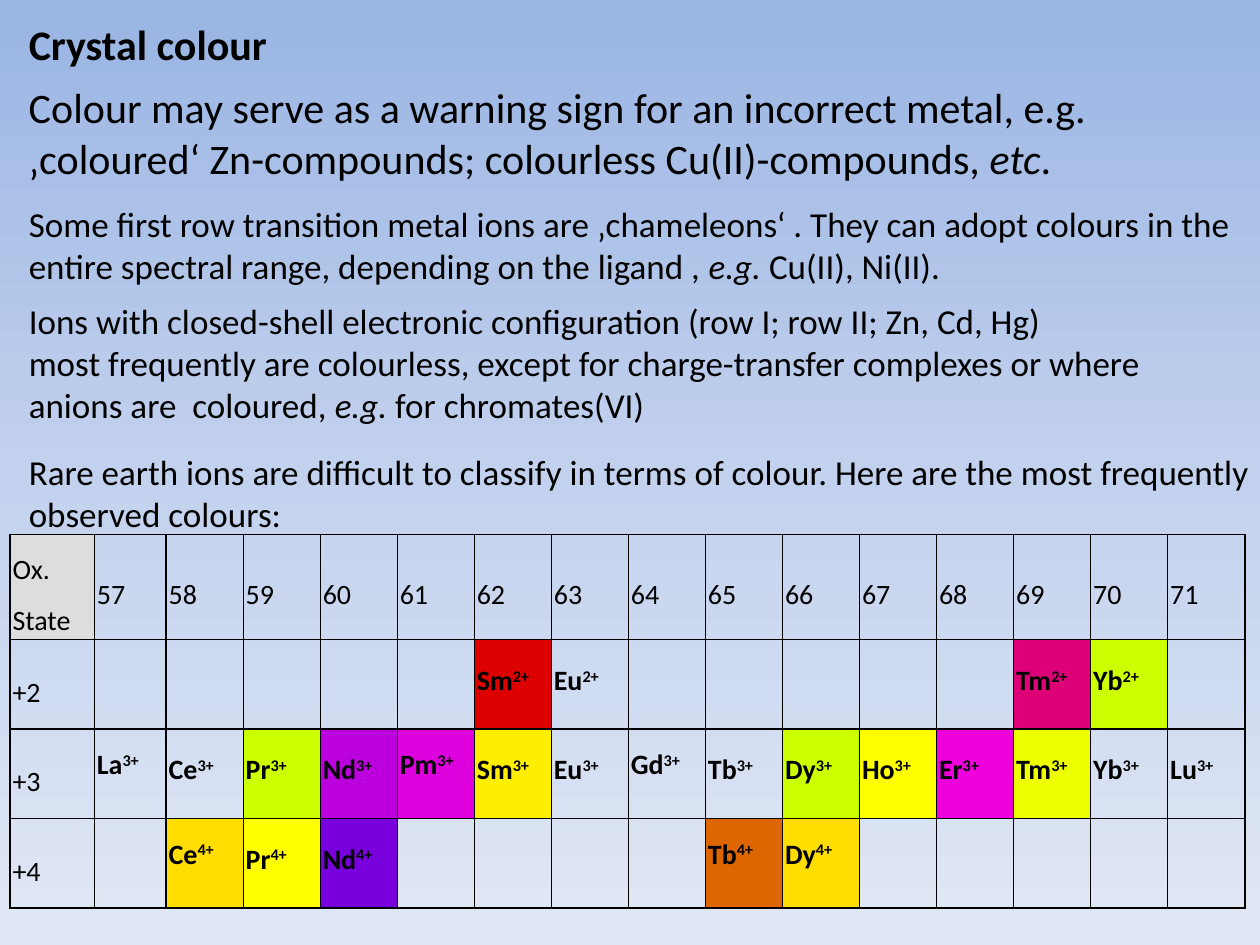
from copy import deepcopy
from dataclasses import dataclass

from lxml.etree import SubElement
from pptx import Presentation
from pptx.dml.color import RGBColor
from pptx.enum.text import MSO_ANCHOR, MSO_AUTO_SIZE
from pptx.oxml.ns import qn
from pptx.util import Inches, Pt


@dataclass(frozen=True)
class Theme:
    font: str = "Calibri"
    ink: str = "000000"
    corner: str = "DDDDDD"
    backdrop: tuple = ((0, "9AB5E4"), (0.5, "C2D1ED"), (1, "E1E8F5"))
    large: int = 24
    body: int = 20
    cell: int = 16
    small: int = 11
    superscript: int = 30000
    border: int = 1


THEME = Theme()

# Box (left, top, width, height), size, bold, lines; a line alternates upright and italic.
PARAGRAPHS = [
    ((0.13, 2.33, 9.11, 1.11), THEME.body, False, [
        ["Ions with closed-shell electronic configuration (row I; row II; Zn, Cd, Hg)"],
        ["most frequently are colourless, except for charge-transfer complexes or where"],
        ["anions are  coloured, ", "e.g. ", "for chromates(VI)"]]),
    ((0.13, 1.56, 9.89, 0.77), THEME.body, False, [
        ["Some first row transition metal ions are ‚chameleons‘ . They can adopt colours in the"],
        ["entire spectral range, depending on the ligand , ", "e.g. ", "Cu(II), Ni(II)."]]),
    ((0.13, 0.1, 2.19, 0.5), THEME.large, True, [["Crystal colour"]]),
    ((0.13, 3.53, 9.99, 0.77), THEME.body, False, [
        ["Rare earth ions are difficult to classify in terms of colour. "
         "Here are the most frequently"],
        ["observed colours:"]]),
    ((0.13, 0.6, 8.74, 0.91), THEME.large, False, [
        ["Colour may serve as a warning sign for an incorrect metal, e.g."],
        ["‚coloured‘ Zn-compounds; colourless Cu(II)-compounds, ", "etc", "."]]),
]

FIRST_NUMBER, LAST_NUMBER = 57, 71
ELEMENTS = "La Ce Pr Nd Pm Sm Eu Gd Tb Dy Ho Er Tm Yb Lu".split()
ION_COLOURS = {
    2: {"Sm": "DD0000", "Eu": None, "Tm": "DD0077", "Yb": "CCFF00"},
    3: dict.fromkeys(ELEMENTS) | {
        "Pr": "CCFF00", "Nd": "BB00DD", "Pm": "DD00DD", "Sm": "FFEE00", "Dy": "CCFF00",
        "Ho": "FFFF00", "Er": "EE00DD", "Tm": "EEFF00"},
    4: {"Ce": "FFDD00", "Pr": "FFFF00", "Nd": "7700DD", "Tb": "DD6600", "Dy": "FFDD00"},
}
RAISED_IONS = {(3, "La"), (3, "Pm"), (3, "Gd"), (4, "Ce"), (4, "Tb"), (4, "Dy")}


def set_all(target, values):
    for name, value in values.items():
        setattr(target, name, value)


def add_span(para, text, size, **styles):
    span = para.add_run()
    span.text = text
    set_all(span.font, {"name": THEME.font, "size": Pt(size), **styles})
    span.font.color.rgb = RGBColor.from_string(THEME.ink)
    return span


def paint_backdrop(page):
    fill = page.background.fill
    fill.gradient()
    fill.gradient_angle = 270
    stop_list = next(page.background._cSld.iter(qn("a:gsLst")))
    stop_list.append(deepcopy(stop_list[-1]))
    for stop, (position, colour) in zip(fill.gradient_stops, THEME.backdrop):
        stop.position = position
        stop.color.rgb = RGBColor.from_string(colour)


def add_paragraph_box(page, box, size, bold, lines):
    frame = page.shapes.add_textbox(*map(Inches, box)).text_frame
    set_all(frame, {"word_wrap": False, "auto_size": MSO_AUTO_SIZE.SHAPE_TO_FIT_TEXT})
    for index, line in enumerate(lines):
        para = frame.add_paragraph() if index else frame.paragraphs[0]
        for part, text in enumerate(line):
            add_span(para, text, size, bold=bold, italic=part % 2 == 1)


def style_cell(cell, colour=None):
    """Set margins, black borders and the fill; without a colour the cell is clear."""
    set_all(cell, {"vertical_anchor": MSO_ANCHOR.MIDDLE,
                   "margin_left": Inches(0.02), "margin_right": Inches(0.02),
                   "margin_top": Inches(0.01), "margin_bottom": Inches(0.01)})
    properties = cell._tc.get_or_add_tcPr()
    for side in ("a:lnL", "a:lnR", "a:lnT", "a:lnB"):
        line = SubElement(properties, qn(side), w=str(Pt(THEME.border)))
        SubElement(SubElement(line, qn("a:solidFill")), qn("a:srgbClr"), val=THEME.ink)
    if colour:
        cell.fill.solid()
        cell.fill.fore_color.rgb = RGBColor.from_string(colour)
    else:
        cell.fill.background()


def write_cell(cell, text, bold=False):
    para = cell.text_frame.paragraphs[0]
    set_all(para, {"line_spacing": 1.5, "space_after": Pt(10)})
    add_span(para, text, THEME.cell, bold=bold)
    return para


def write_ion(cell, element, charge):
    """Write symbol and raised charge, then a line break that lifts the text."""
    para = write_cell(cell, element, bold=True)
    raised = add_span(para, f"{charge}+", THEME.cell, bold=True)
    raised_format = raised._r.get_or_add_rPr()
    raised_format.set("baseline", str(THEME.superscript))
    para.add_line_break()
    para._p[-1].append(deepcopy(raised_format))
    end_size = THEME.cell if (charge, element) in RAISED_IONS else THEME.small
    SubElement(para._p, qn("a:endParaRPr"), sz=str(end_size * 100))


def add_ion_table(page, left, top, width, height):
    columns = len(ELEMENTS) + 1
    rows = len(ION_COLOURS) + 1
    table = page.shapes.add_table(
        rows, columns, *map(Inches, (left, top, width, height))).table
    set_all(table, {"first_row": False, "horz_banding": False})
    lead = [0.67, 0.57]
    rest = (width - sum(lead)) / (columns - len(lead))
    for column, size in zip(table.columns, lead + [rest] * (columns - len(lead))):
        column.width = Inches(size)

    style_cell(table.cell(0, 0), THEME.corner)
    write_cell(table.cell(0, 0), "Ox. State")
    for column, number in enumerate(range(FIRST_NUMBER, LAST_NUMBER + 1), 1):
        style_cell(table.cell(0, column))
        write_cell(table.cell(0, column), str(number))
    for row, (charge, colours) in enumerate(ION_COLOURS.items(), 1):
        style_cell(table.cell(row, 0))
        write_cell(table.cell(row, 0), f"+{charge}")
        for column, element in enumerate(ELEMENTS, 1):
            cell = table.cell(row, column)
            style_cell(cell, colours.get(element))
            if element in colours:
                write_ion(cell, element, charge)


def main():
    deck = Presentation()
    set_all(deck, {"slide_width": Inches(10), "slide_height": Inches(7.5)})
    page = deck.slides.add_slide(deck.slide_layouts[6])
    paint_backdrop(page)
    add_ion_table(page, 0.08, 4.24, 9.8, 2.84)
    for paragraph in PARAGRAPHS:
        add_paragraph_box(page, *paragraph)
    deck.save("out.pptx")


if __name__ == "__main__":
    main()
